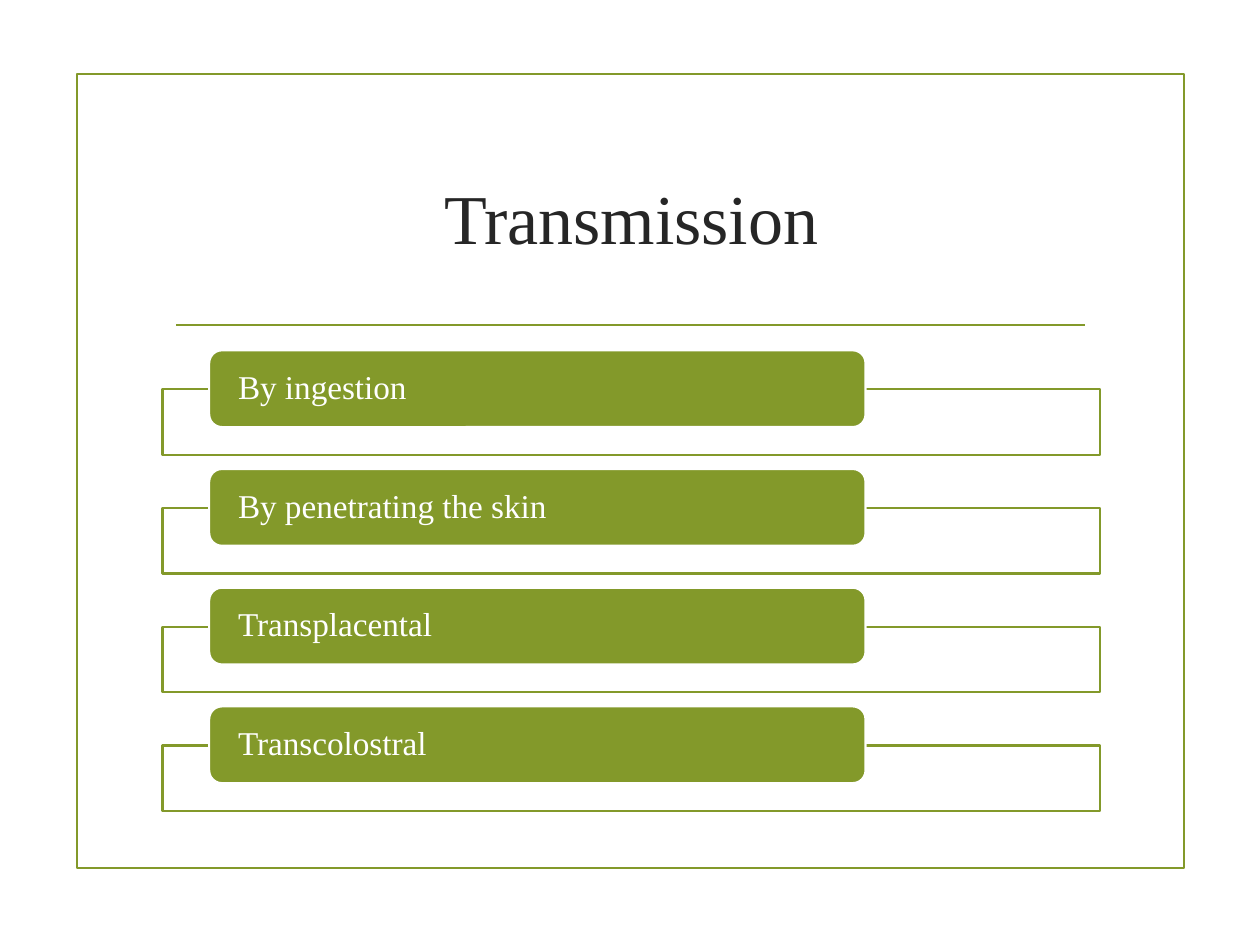
from pptx import Presentation
from pptx.dml.color import RGBColor
from pptx.enum.shapes import MSO_CONNECTOR, MSO_SHAPE
from pptx.enum.text import MSO_ANCHOR, PP_ALIGN
from pptx.oxml.xmlchemy import OxmlElement
from pptx.util import Inches, Pt

COLORS = {"olive": "83992A", "white": "FFFFFF", "title": "262626"}
FONT = "Times New Roman"
LINE_WIDTH = Pt(1.25)
ROUTES = ["By ingestion", "By penetrating the skin", "Transplacental", "Transcolostral"]
ROUTE_TOP, ROUTE_STEP = 2.78, 0.942


def add_box(shape_type, left, top, width, height, line, fill=None):
    box = slide.shapes.add_shape(
        shape_type, Inches(left), Inches(top), Inches(width), Inches(height))
    box.shadow.inherit = False
    box.line.color.rgb = RGBColor.from_string(COLORS[line])
    box.line.width = LINE_WIDTH
    if fill:
        box.fill.solid()
        box.fill.fore_color.rgb = RGBColor.from_string(COLORS[fill])
    else:
        box.fill.background()
    return box


def write(frame, text, size, color, align):
    frame.text = text
    frame.word_wrap = True
    frame.vertical_anchor = MSO_ANCHOR.MIDDLE
    paragraph = frame.paragraphs[0]
    paragraph.alignment = align
    font = paragraph.runs[0].font
    font.name, font.size = FONT, Pt(size)
    font.color.rgb = RGBColor.from_string(COLORS[color])
    return paragraph


prs = Presentation()
prs.slide_width, prs.slide_height = Inches(10), Inches(7.5)
slide = prs.slides.add_slide(prs.slide_layouts[6])

# Page border and title
add_box(MSO_SHAPE.RECTANGLE, 0.61, 0.59, 8.79, 6.3, "olive")
divider = slide.shapes.add_connector(
    MSO_CONNECTOR.STRAIGHT, Inches(1.4), Inches(2.58), Inches(8.61), Inches(2.58))
divider.line.color.rgb = RGBColor.from_string(COLORS["olive"])
divider.line.width = LINE_WIDTH
divider._element.spPr.append(OxmlElement("a:effectLst"))
title = slide.shapes.add_textbox(Inches(1.29), Inches(1), Inches(7.44), Inches(1.43))
write(title.text_frame, "Transmission", 40, "title", PP_ALIGN.CENTER)

# Transmission routes: an open panel behind each rounded label
for row, route in enumerate(ROUTES):
    top = ROUTE_TOP + row * ROUTE_STEP
    panel = add_box(MSO_SHAPE.RECTANGLE, 1.29, top + 0.31, 7.44, 0.52, "olive", "white")
    alpha = OxmlElement("a:alpha")
    alpha.set("val", "90000")
    panel._element.spPr.solidFill[0].append(alpha)

    label = add_box(MSO_SHAPE.ROUNDED_RECTANGLE, 1.66, top, 5.21, 0.61, "white", "olive")
    frame = label.text_frame
    frame.margin_left = frame.margin_right = Inches(0.2)
    frame.margin_top = frame.margin_bottom = 0
    write(frame, route, 19, "white", PP_ALIGN.LEFT).line_spacing = 0.9

prs.save("out.pptx")
